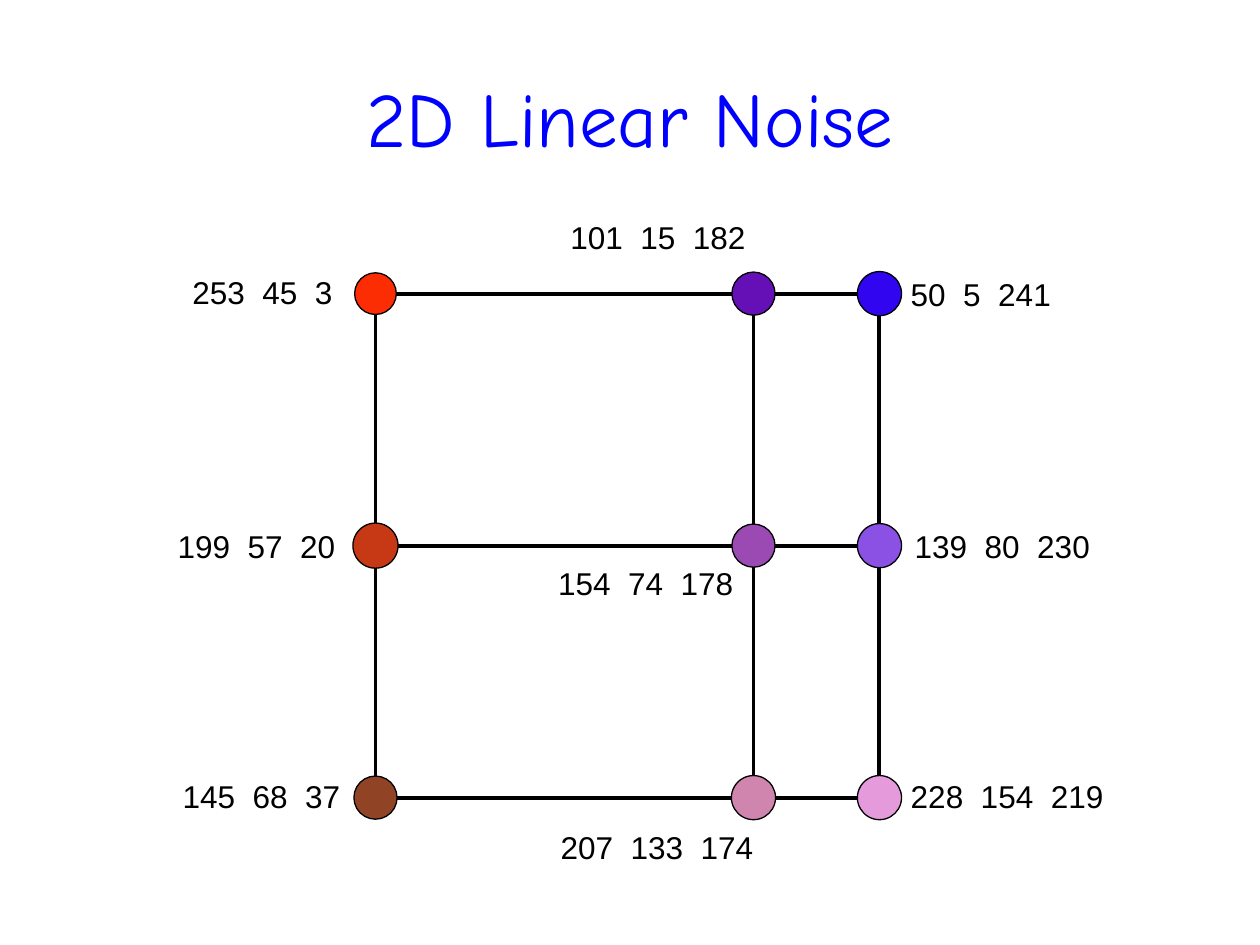
from pptx import Presentation
from pptx.dml.color import RGBColor
from pptx.enum.shapes import MSO_CONNECTOR, MSO_SHAPE
from pptx.enum.text import MSO_ANCHOR, MSO_AUTO_SIZE, PP_ALIGN
from pptx.oxml.ns import qn
from pptx.util import Cm, Pt
from lxml import etree

STRAIGHT = MSO_CONNECTOR.STRAIGHT
RECTANGLE = MSO_SHAPE.RECTANGLE
OVAL = MSO_SHAPE.OVAL
MIDDLE = MSO_ANCHOR.MIDDLE
GROW = MSO_AUTO_SIZE.SHAPE_TO_FIT_TEXT
CENTER = PP_ALIGN.CENTER
LEFT = PP_ALIGN.LEFT

COLORS = {
    "title": "0000FF",
    "ink": "000000",
    "red": "FD2D03",
    "rust": "C73914",
    "brown": "914425",
    "indigo": "650FB6",
    "purple": "9A4AB2",
    "rose": "CF85AE",
    "blue": "3205F1",
    "violet": "8B50E4",
    "pink": "E49ADB",
}

SIDE = 10.16
X_LEFT, Y_TOP = 7.57, 5.92
X_SAMPLE, X_RIGHT = X_LEFT + SIDE * 3 / 4, X_LEFT + SIDE
Y_MIDDLE, Y_BOTTOM = Y_TOP + SIDE / 2, Y_TOP + SIDE

NODES = [
    (X_LEFT, Y_TOP, 0.84, "red", "253  45  3", 3.63, 5.38, 3.73),
    (X_LEFT, Y_MIDDLE, 0.91, "rust", "199  57  20", 3.33, 10.49, 3.73),
    (X_LEFT, Y_BOTTOM, 0.87, "brown", "145  68  37", 3.43, 15.54, 3.73),
    (X_SAMPLE, Y_TOP, 0.87, "indigo", "101  15  182", 11.25, 4.27, 4.17),
    (X_SAMPLE, Y_MIDDLE, 0.87, "purple", "154  74  178", 11.0, 11.25, 4.09),
    (X_SAMPLE, Y_BOTTOM, 0.89, "rose", "207  133  174", 11.05, 16.56, 4.67),
    (X_RIGHT, Y_TOP, 0.89, "blue", "50  5  241", 18.11, 5.41, 3.73),
    (X_RIGHT, Y_MIDDLE, 0.89, "violet", "139  80  230", 18.19, 10.49, 4.57),
    (X_RIGHT, Y_BOTTOM, 0.89, "pink", "228  154  219", 18.11, 15.54, 4.6),
]


class SlideBuilder:
    title_font = "Comic Neue"
    label_font = "Arial"
    grid_width = 2.25
    node_width = 0.75

    def __init__(self, slide):
        self.slide = slide

    def color(self, name):
        return RGBColor.from_string(COLORS[name])

    def outline(self, line, width):
        line.color.rgb = self.color("ink")
        line.width = Pt(width)

    def add_text(self, frame, text, font, size, color, alignment):
        paragraph = frame.paragraphs[0]
        paragraph.alignment = alignment
        run = paragraph.add_run()
        run.text = text
        run.font.name = font
        run.font.size = Pt(size)
        run.font.color.rgb = self.color(color)

    def title(self, text, left, top, width, height):
        shape = self.slide.shapes.title
        shape.left, shape.top = Cm(left), Cm(top)
        shape.width, shape.height = Cm(width), Cm(height)
        shape.text_frame.vertical_anchor = MIDDLE
        self.add_text(shape.text_frame, text, self.title_font, 44, "title", CENTER)

    def square(self, left, top, side):
        shape = self.slide.shapes.add_shape(
            RECTANGLE, Cm(left), Cm(top), Cm(side), Cm(side))
        shape.shadow.inherit = False
        shape.fill.background()
        self.outline(shape.line, self.grid_width)
        return shape

    def line(self, x1, y1, x2, y2):
        connector = self.slide.shapes.add_connector(
            STRAIGHT, Cm(x1), Cm(y1), Cm(x2), Cm(y2))
        self.outline(connector.line, self.grid_width)
        etree.SubElement(connector._element.spPr, qn("a:effectLst"))
        return connector

    def node(self, x, y, diameter, color):
        shape = self.slide.shapes.add_shape(
            OVAL, Cm(x - diameter / 2), Cm(y - diameter / 2),
            Cm(diameter), Cm(diameter))
        shape.shadow.inherit = False
        shape.fill.solid()
        shape.fill.fore_color.rgb = self.color(color)
        self.outline(shape.line, self.node_width)

    def label(self, text, left, top, width):
        shape = self.slide.shapes.add_textbox(
            Cm(left), Cm(top), Cm(width), Cm(1.02))
        frame = shape.text_frame
        frame.word_wrap = True
        frame.auto_size = GROW
        self.add_text(frame, text, self.label_font, 18, "ink", LEFT)


def main():
    presentation = Presentation()
    presentation.slide_width = Cm(25.4)
    presentation.slide_height = Cm(19.05)
    title_only = presentation.slide_layouts[5]
    builder = SlideBuilder(presentation.slides.add_slide(title_only))

    builder.title("2D Linear Noise", 1.27, 0.76, 22.86, 3.18)
    square = builder.square(X_LEFT, Y_TOP, SIDE)
    for x in (X_SAMPLE, X_RIGHT):
        builder.line(x, Y_TOP, x, Y_BOTTOM)
    middle_line = builder.line(X_LEFT, Y_MIDDLE, X_RIGHT, Y_MIDDLE)
    middle_line.begin_connect(square, 1)
    middle_line.end_connect(square, 3)

    for x, y, diameter, color, text, left, top, width in NODES:
        builder.node(x, y, diameter, color)
        builder.label(text, left, top, width)

    presentation.save("out.pptx")


if __name__ == "__main__":
    main()
